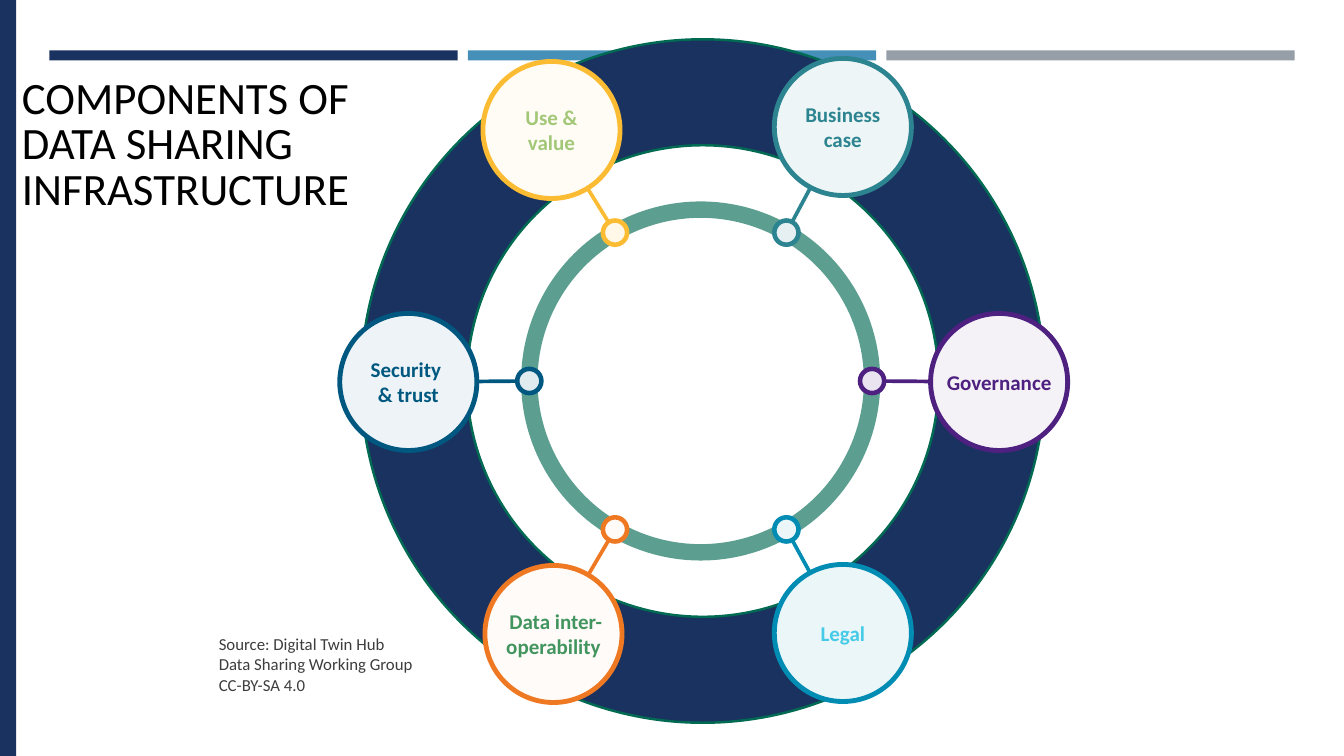
import math

from lxml import etree
from pptx import Presentation
from pptx.dml.color import RGBColor
from pptx.enum.shapes import MSO_CONNECTOR, MSO_SHAPE
from pptx.enum.text import MSO_ANCHOR, PP_ALIGN
from pptx.oxml.ns import qn
from pptx.util import Inches, Pt

OVAL, RECT, DONUT = MSO_SHAPE.OVAL, MSO_SHAPE.RECTANGLE, MSO_SHAPE.DONUT
STRAIGHT = MSO_CONNECTOR.STRAIGHT
TOP, MIDDLE = MSO_ANCHOR.TOP, MSO_ANCHOR.MIDDLE
LEFT, CENTER = PP_ALIGN.LEFT, PP_ALIGN.CENTER

# Content
TITLE = ["COMPONENTS OF", "DATA SHARING", "INFRASTRUCTURE"]
SOURCE = ["Source: Digital Twin Hub", "Data Sharing Working Group", "CC-BY-SA 4.0"]
# angle, label centre, lines, accent, label fill, dot fill, text colour
COMPONENTS = [
    (60, (8.36, 1.26), ["Business", "case"], "2B848F", "EEF5F6", "E6F0F2", "2B848F"),
    (120, (5.47, 1.29), ["Use &", "value"], "FBBC33", "FFFCF5", "FFF7E7", "A2C777"),
    (0, (9.91, 3.79), ["Governance"], "4E2080", "F4F2F7", "EAE4F0", "4E2080"),
    (180, (4.05, 3.79), ["Security ", "& trust"], "005880", "EDF3F6", "E0EBF0", "005880"),
    (300, (8.36, 6.28), ["Legal"], "008CB3", "EBF6F9", "EBF6F9", "45CBE8"),
    (240, (5.49, 6.29), [" Data inter-", "operability"], "EF7923", "FFFBF8", "FFFBF8", "42955F"),
]

# Layout
WIDTH, HEIGHT = 13.33, 7.5
BAR_COLORS = ["1A3260", "4590B8", "969FA7"]
BAR_LEFT, BAR_WIDTH, BAR_STEP = 0.49, 4.05, 4.15
RING_CENTER, RING_RADIUS = (6.95, 3.78), 1.7
DONUT_CENTER, DONUT_RADIUS = (6.97, 3.78), 3.39
DOT_RADIUS, LABEL_RADIUS = 0.12, 0.68
NAVY, GREEN = "1A3260", "006A52"


def color(value):
    return RGBColor.from_string(value)


def add_block(page, kind, left, top, width, height, fill=None, line=None, weight=0):
    block = page.shapes.add_shape(kind, *map(Inches, (left, top, width, height)))
    block.shadow.inherit = False
    if fill:
        block.fill.solid()
        block.fill.fore_color.rgb = color(fill)
    else:
        block.fill.background()
    if line:
        block.line.color.rgb = color(line)
        block.line.width = Pt(weight)
    else:
        block.line.fill.background()
    return block


def add_round(page, center, radius, fill, line, weight, kind=OVAL):
    x, y = center
    return add_block(page, kind, x - radius, y - radius, 2 * radius, 2 * radius,
                     fill, line, weight)


def add_spoke(page, dot, label, line):
    """Join the edge of a dot to the edge of its label."""
    dx, dy = label[0] - dot[0], label[1] - dot[1]
    length = math.hypot(dx, dy)
    near, far = DOT_RADIUS / length, 1 - LABEL_RADIUS / length
    ends = [dot[0] + dx * near, dot[1] + dy * near, dot[0] + dx * far, dot[1] + dy * far]
    spoke = page.shapes.add_connector(STRAIGHT, *map(Inches, ends))
    spoke.line.color.rgb = color(line)
    spoke.line.width = Pt(2.63)
    etree.SubElement(spoke.element.spPr, qn("a:effectLst"))


def write(box, paragraphs, size, ink, bold=False, align=LEFT, anchor=TOP,
          wrap=False, margins=None, spacing=None):
    """Each paragraph is a list of lines parted by line breaks."""
    frame = box.text_frame
    frame.word_wrap = wrap
    frame.vertical_anchor = anchor
    if margins is not None:
        frame.margin_left = frame.margin_right = Inches(margins)
        frame.margin_top = frame.margin_bottom = Inches(margins)
    for number, lines in enumerate(paragraphs):
        para = frame.add_paragraph() if number else frame.paragraphs[0]
        para.alignment = align
        if spacing:
            para.line_spacing = spacing
        for index, line in enumerate(lines):
            if index:
                para.add_line_break()
            span = para.add_run()
            span.text = line
            span.font.name = "Calibri"
            span.font.size = Pt(size)
            span.font.bold = bold
            span.font.color.rgb = color(ink)


def add_text(page, left, top, width, height):
    return page.shapes.add_textbox(*map(Inches, (left, top, width, height)))


def main():
    deck = Presentation()
    deck.slide_width, deck.slide_height = Inches(WIDTH), Inches(HEIGHT)
    page = deck.slides.add_slide(deck.slide_layouts[6])

    # Top bars and side band
    for column, fill in enumerate(BAR_COLORS):
        add_block(page, RECT, BAR_LEFT + column * BAR_STEP, 0.5, BAR_WIDTH, 0.1, fill)
    add_block(page, RECT, 0, 0, 0.16, HEIGHT, NAVY)

    # Translucent inner ring
    ring = add_round(page, RING_CENTER, RING_RADIUS, None, GREEN, 11.7)
    tint = ring.line.fill.fore_color
    ring_color = next(ring.element.spPr.iter(qn("a:srgbClr")))
    etree.SubElement(ring_color, qn("a:alpha")).set("val", "63000")

    # Title
    write(add_text(page, 0.12, 0.72, 8, 1.93), [TITLE], 32, "000000",
          wrap=True, spacing=0.85)

    # Dots and spokes
    for angle, label, _, accent, _, dot_fill, _ in COMPONENTS:
        turn = math.radians(angle)
        dot = (RING_CENTER[0] + RING_RADIUS * math.cos(turn),
               RING_CENTER[1] - RING_RADIUS * math.sin(turn))
        add_round(page, dot, DOT_RADIUS, dot_fill, accent, 3.25)
        add_spoke(page, dot, label, accent)

    # Outer donut
    donut = add_round(page, DONUT_CENTER, DONUT_RADIUS, NAVY, GREEN, 1.75, DONUT)
    donut.adjustments[0] = 0.155

    # Component labels
    for _, label, lines, accent, fill, _, ink in COMPONENTS:
        disc = add_round(page, label, LABEL_RADIUS, fill, accent, 3.46)
        write(disc, [lines], 15, ink, bold=True, align=CENTER, anchor=MIDDLE)

    # Source note
    write(add_text(page, 2.17, 6.29, 2, 0.65), [[line] for line in SOURCE], 12,
          "3D3D3D", margins=0)

    deck.save("out.pptx")


if __name__ == "__main__":
    main()
